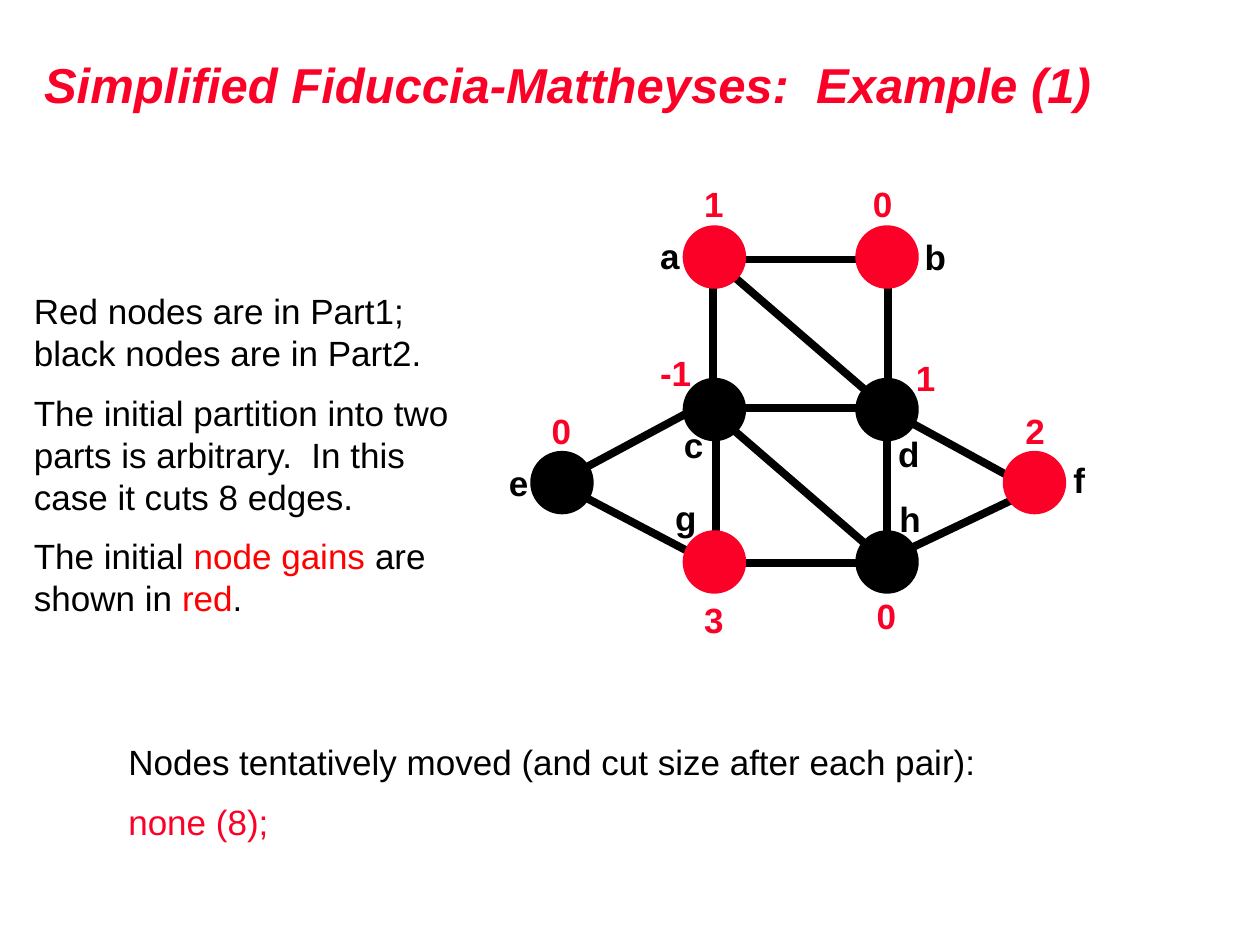
from dataclasses import dataclass
from typing import NamedTuple

from pptx import Presentation
from pptx.dml.color import RGBColor
from pptx.enum.shapes import MSO_CONNECTOR, MSO_SHAPE
from pptx.enum.text import MSO_ANCHOR, MSO_AUTO_SIZE, PP_ALIGN
from pptx.oxml.xmlchemy import OxmlElement
from pptx.util import Inches, Pt


@dataclass(frozen=True)
class Theme:
    font: str = "Arial"
    red: RGBColor = RGBColor(0xFC, 0x01, 0x28)
    bright: RGBColor = RGBColor(0xFF, 0x00, 0x00)
    black: RGBColor = RGBColor(0x00, 0x00, 0x00)
    title_size: Pt = Pt(28)
    text_size: Pt = Pt(20)
    para_gap: Pt = Pt(10)
    edge_width: Pt = Pt(4.5)
    node_line: Pt = Pt(6)


class Label(NamedTuple):
    text: str
    x: float
    y: float
    w: float = 0.36


class Node(NamedTuple):
    x: float
    y: float
    color: RGBColor
    name: Label
    gain: Label


class Edge(NamedTuple):
    x1: float
    y1: float
    x2: float
    y2: float


class Span(NamedTuple):
    text: str
    color: RGBColor


T = Theme()
NODE_SIZE = 0.42
LABEL_HEIGHT = 0.43
LEFT, RIGHT = 5.46, 6.83
TOP, UPPER, MIDDLE, BOTTOM = 1.83, 3.04, 3.62, 4.25

NODES = [
    Node(LEFT, TOP, T.red, Label("a", 5.14, 1.81), Label("1", 5.49, 1.4)),
    Node(RIGHT, TOP, T.red, Label("b", 7.24, 1.82, 0.37), Label("0", 6.83, 1.4)),
    Node(LEFT, UPPER, T.black, Label("c", 5.33, 3.31), Label("-1", 5.14, 2.74, 0.45)),
    Node(RIGHT, UPPER, T.black, Label("d", 7.03, 3.38, 0.37), Label("1", 7.17, 2.78)),
    Node(4.25, MIDDLE, T.black, Label("e", 3.94, 3.61), Label("0", 4.28, 3.2)),
    Node(8, MIDDLE, T.red, Label("f", 8.42, 3.59, 0.29), Label("2", 8.04, 3.2)),
    Node(LEFT, BOTTOM, T.red, Label("g", 5.26, 3.89, 0.37), Label("3", 5.49, 4.7)),
    Node(RIGHT, BOTTOM, T.black, Label("h", 7.04, 3.9, 0.37), Label("0", 6.86, 4.67)),
]

EDGES = [
    Edge(4.65, 3.71, 5.47, 3.27),
    Edge(7.25, 4.34, 8.05, 3.96),
    Edge(4.63, 3.94, 5.45, 4.37),
    Edge(5.89, 4.47, 6.81, 4.47),
    Edge(5.89, 3.24, 6.82, 3.24),
    Edge(5.91, 2.06, 6.83, 2.06),
    Edge(7.24, 3.36, 7.99, 3.77),
    Edge(5.66, 2.26, 5.66, 3.04),
    Edge(7.05, 2.25, 7.05, 3.03),
    Edge(5.68, 3.48, 5.68, 4.26),
    Edge(7.04, 3.47, 7.04, 4.25),
    Edge(5.83, 3.42, 6.86, 4.31),
    Edge(5.83, 2.2, 6.86, 3.09),
]

EXPLANATION = [
    [Span("Red nodes are in Part1; black nodes are in Part2.", T.black)],
    [Span("The initial partition into two parts is arbitrary.  "
          "In this case it cuts 8 edges.", T.black)],
    [Span("The initial ", T.black), Span("node gains ", T.bright),
     Span("are shown in ", T.black), Span("red", T.bright), Span(".", T.black)],
]

MOVES = [
    [Span("Nodes tentatively moved (and cut size after each pair):", T.black)],
    [Span("none (8);", T.red)],
]


def apply(target, values: dict) -> None:
    for key, value in values.items():
        setattr(target, key, value)


def add_run(p, span: Span, **extra) -> None:
    r = p.add_run()
    r.text = span.text
    apply(r.font, {"name": T.font, "size": T.text_size, **extra})
    r.font.color.rgb = span.color


def add_title(s, text: str) -> None:
    sp = s.shapes.title
    apply(sp, {"left": Inches(0.25), "top": Inches(0.33),
               "width": Inches(9.25), "height": Inches(0.67)})
    tf = sp.text_frame
    apply(tf, {"auto_size": MSO_AUTO_SIZE.NONE, "word_wrap": True,
               "vertical_anchor": MSO_ANCHOR.MIDDLE})
    p = tf.paragraphs[0]
    p.alignment = PP_ALIGN.LEFT
    add_run(p, Span(text, T.red), size=T.title_size, bold=True, italic=True)


def add_edge(s, edge: Edge) -> None:
    line = s.shapes.add_connector(MSO_CONNECTOR.STRAIGHT, *map(Inches, edge))
    line.line.width = T.edge_width
    line.line.color.rgb = T.black
    line._element.spPr.append(OxmlElement("a:effectLst"))


def add_label(s, label: Label, color: RGBColor) -> None:
    sp = s.shapes.add_textbox(Inches(label.x), Inches(label.y),
                              Inches(label.w), Inches(LABEL_HEIGHT))
    tf = sp.text_frame
    apply(tf, {"word_wrap": False, "auto_size": MSO_AUTO_SIZE.SHAPE_TO_FIT_TEXT})
    add_run(tf.paragraphs[0], Span(label.text, color), bold=True)


def add_node(s, node: Node) -> None:
    sp = s.shapes.add_shape(MSO_SHAPE.OVAL, Inches(node.x), Inches(node.y),
                            Inches(NODE_SIZE), Inches(NODE_SIZE))
    sp.shadow.inherit = False
    sp.fill.solid()
    sp.fill.fore_color.rgb = node.color
    sp.line.color.rgb = node.color
    sp.line.width = T.node_line


def add_paragraphs(s, x: float, y: float, w: float, h: float,
                   paragraphs: list[list[Span]]) -> None:
    tf = s.shapes.add_textbox(*map(Inches, (x, y, w, h))).text_frame
    apply(tf, {"word_wrap": True, "auto_size": MSO_AUTO_SIZE.SHAPE_TO_FIT_TEXT})
    for i, spans in enumerate(paragraphs):
        p = tf.add_paragraph() if i else tf.paragraphs[0]
        p.space_before = T.para_gap
        for span in spans:
            add_run(p, span)


def main() -> None:
    prs = Presentation()
    apply(prs, {"slide_width": Inches(10), "slide_height": Inches(7.5)})
    s = prs.slides.add_slide(prs.slide_layouts[5])
    add_title(s, "Simplified Fiduccia-Mattheyses:  Example (1)")
    for edge in EDGES:
        add_edge(s, edge)
    for node in NODES:
        add_node(s, node)
    for node in NODES:
        add_label(s, node.name, T.black)
        add_label(s, node.gain, T.red)
    add_paragraphs(s, 0.17, 2.25, 3.58, 2.77, EXPLANATION)
    add_paragraphs(s, 0.92, 5.83, 7.17, 0.93, MOVES)
    prs.save("out.pptx")


if __name__ == "__main__":
    main()
